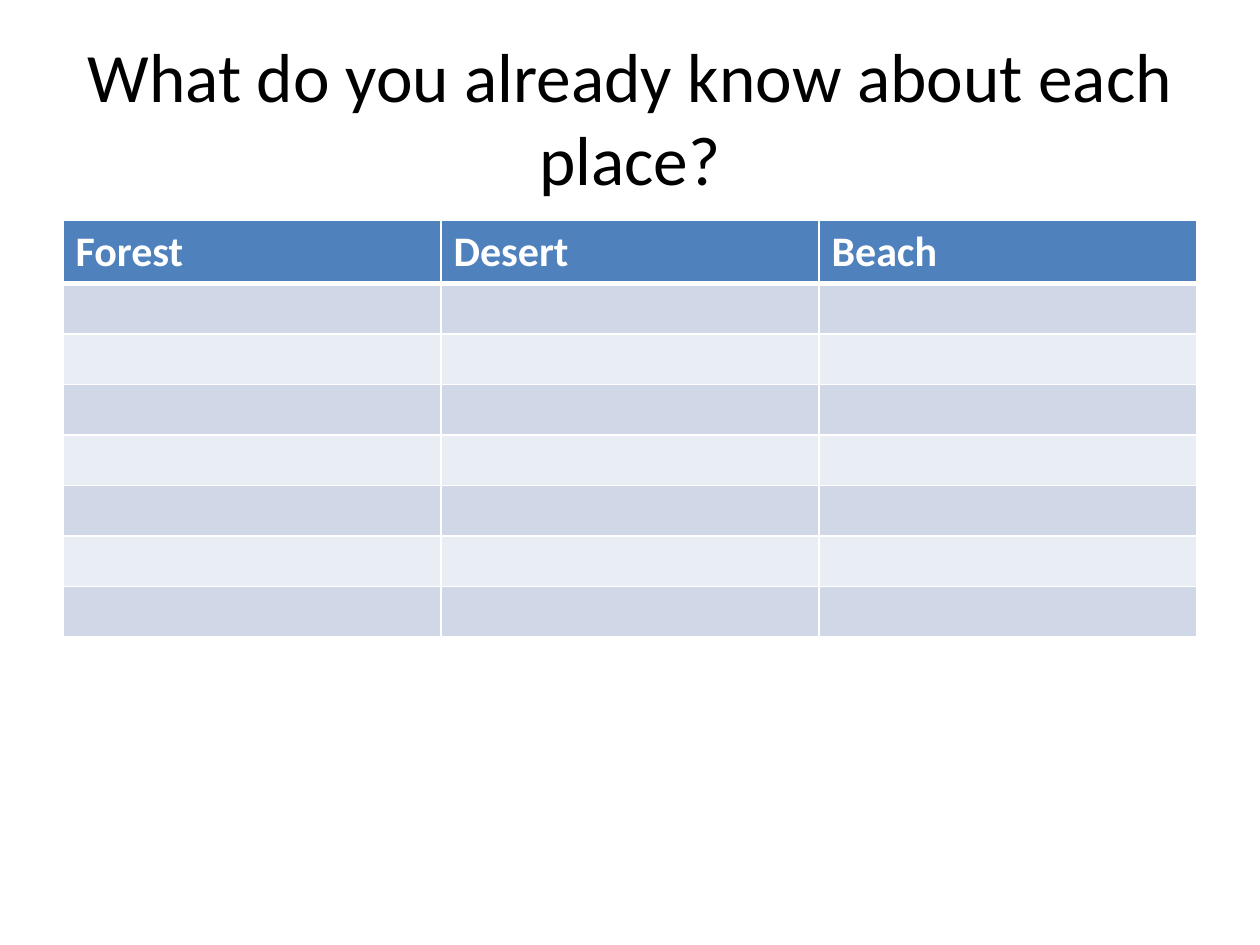
from lxml import etree
from pptx import Presentation
from pptx import util as u
from pptx.dml.color import RGBColor
from pptx.enum import text
from pptx.oxml import ns


def color(code):
    return RGBColor.from_string(code)


class Deck:
    font = "Calibri"
    ink, white = "000000", "FFFFFF"
    head = "4F81BD"
    bands = ("D0D8E8", "E9EDF4")

    def __init__(self, wide, high):
        self.prs = Presentation()
        self.prs.slide_width = u.Inches(wide)
        self.prs.slide_height = u.Inches(high)
        self.slide = self.prs.slides.add_slide(self.prs.slide_layouts[6])

    def style(self, par, size, code, bold=False):
        for run in par.runs:
            run.font.name = self.font
            run.font.size = u.Pt(size)
            run.font.bold = bold
            run.font.color.rgb = color(code)

    def title(self, words, *area):
        box = self.slide.shapes.add_textbox(*map(u.Inches, area))
        frame = box.text_frame
        frame.word_wrap = True
        frame.vertical_anchor = text.MSO_ANCHOR.MIDDLE
        frame.text = words
        par = frame.paragraphs[0]
        par.alignment = text.PP_ALIGN.CENTER
        self.style(par, 39.6, self.ink)

    def edge(self, cell, side, width):
        props = cell._tc.get_or_add_tcPr()
        line = etree.SubElement(props, ns.qn(f"a:{side}"), w=str(u.Pt(width)))
        fill = etree.SubElement(line, ns.qn("a:solidFill"))
        etree.SubElement(fill, ns.qn("a:srgbClr"), val=self.white)

    def table(self, heads, blanks, left, top, width, tall, step):
        shape = self.slide.shapes.add_table(
            blanks + 1, len(heads), u.Inches(left), u.Inches(top),
            u.Inches(width), u.Inches(tall + blanks * step))
        grid = shape.table
        for i, row in enumerate(grid.rows):
            row.height = u.Inches(step if i else tall)
            for cell in row.cells:
                # Borders come before the fill in the cell properties
                for side in ("lnL", "lnR", "lnT", "lnB"):
                    heavy = (i, side) in ((0, "lnB"), (1, "lnT"))
                    self.edge(cell, side, 3 if heavy else 1)
                cell.fill.solid()
                code = self.bands[(i - 1) % 2] if i else self.head
                cell.fill.fore_color.rgb = color(code)
        for cell, word in zip(grid.rows[0].cells, heads):
            cell.text_frame.text = word
            self.style(cell.text_frame.paragraphs[0], 24, self.white, True)


def main():
    deck = Deck(10, 7.5)

    # Question
    deck.title("What do you already know about each place?", 0.5, 0.3, 9, 1.25)

    # Empty chart to fill in, one column per place
    deck.table(["Forest", "Desert", "Beach"], 7, 0.5, 1.75, 9, 0.5, 0.4)

    deck.prs.save("out.pptx")


if __name__ == "__main__":
    main()
